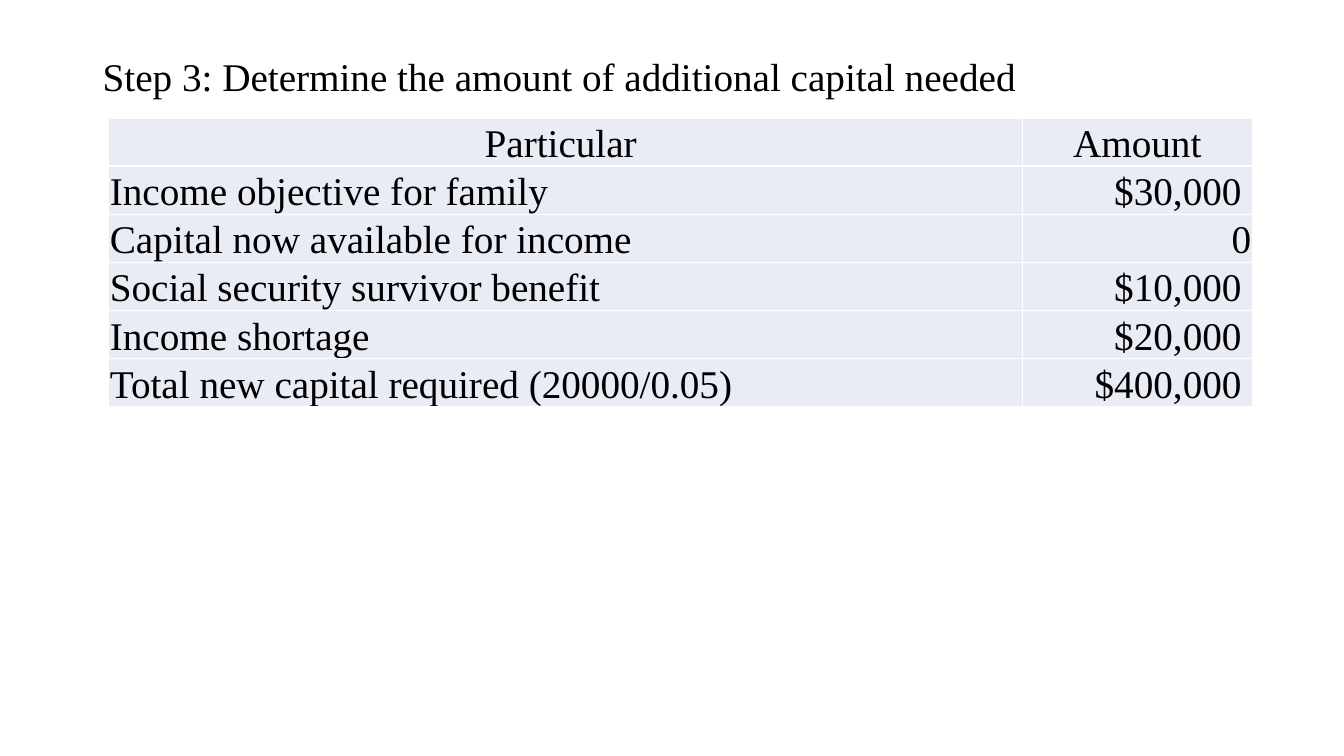
from dataclasses import dataclass

from pptx import Presentation
from pptx import util as u
from pptx.dml.color import RGBColor
from pptx.enum import text

TITLE = "Step 3: Determine the amount of additional capital needed"
HEADER = ("Particular ", "Amount")
ROWS = [
    ("Income objective for family", "$30,000 "),
    ("Capital now available for income", "0"),
    ("Social security survivor benefit", "$10,000 "),
    ("Income shortage", "$20,000 "),
    ("Total new capital required (20000/0.05)", "$400,000 "),
]

SLIDE_SIZE = (13.33, 7.5)
TITLE_BOX = (0.92, 0.52, 11.5, 6.24)
TABLE_CORNER = (1.08, 1.17)
COLUMN_WIDTHS = (9.06, 2.28)
ROW_HEIGHT = 0.44
CELL_INSET = 0.01


@dataclass(frozen=True)
class Theme:
    font: str = "Times New Roman"
    size: int = 28
    ink: RGBColor = RGBColor(0, 0, 0)
    cell: RGBColor = RGBColor(0xE9, 0xEB, 0xF5)


THEME = Theme()


def write(para, words, align):
    para.text = words
    para.alignment = align
    for span in para.runs:
        span.font.name = THEME.font
        span.font.size = u.Pt(THEME.size)
        span.font.color.rgb = THEME.ink


def add_title(page):
    box = page.shapes.add_textbox(*map(u.Inches, TITLE_BOX))
    box.text_frame.word_wrap = True
    para = box.text_frame.paragraphs[0]
    write(para, TITLE, text.PP_ALIGN.LEFT)
    para.line_spacing = 0.9


def fill_cell(cell, words, align):
    cell.fill.solid()
    cell.fill.fore_color.rgb = THEME.cell
    cell.vertical_anchor = text.MSO_ANCHOR.BOTTOM
    cell.margin_left = cell.margin_right = cell.margin_top = u.Inches(CELL_INSET)
    cell.margin_bottom = 0
    write(cell.text_frame.paragraphs[0], words, align)


def add_capital_table(page):
    lines = [HEADER, *ROWS]
    size = (sum(COLUMN_WIDTHS), ROW_HEIGHT * len(lines))
    table = page.shapes.add_table(
        len(lines), len(HEADER), *map(u.Inches, TABLE_CORNER + size)
    ).table
    table.first_row = table.horz_banding = False
    for column, width in zip(table.columns, COLUMN_WIDTHS):
        column.width = u.Inches(width)
    header_aligns = (text.PP_ALIGN.CENTER, text.PP_ALIGN.CENTER)
    body_aligns = (text.PP_ALIGN.LEFT, text.PP_ALIGN.RIGHT)
    for r, line in enumerate(lines):
        aligns = body_aligns if r else header_aligns
        for c, (words, align) in enumerate(zip(line, aligns)):
            fill_cell(table.cell(r, c), words, align)


def main():
    deck = Presentation()
    deck.slide_width, deck.slide_height = map(u.Inches, SLIDE_SIZE)
    page = deck.slides.add_slide(deck.slide_layouts[6])
    add_title(page)
    add_capital_table(page)
    deck.save("out.pptx")


if __name__ == "__main__":
    main()
